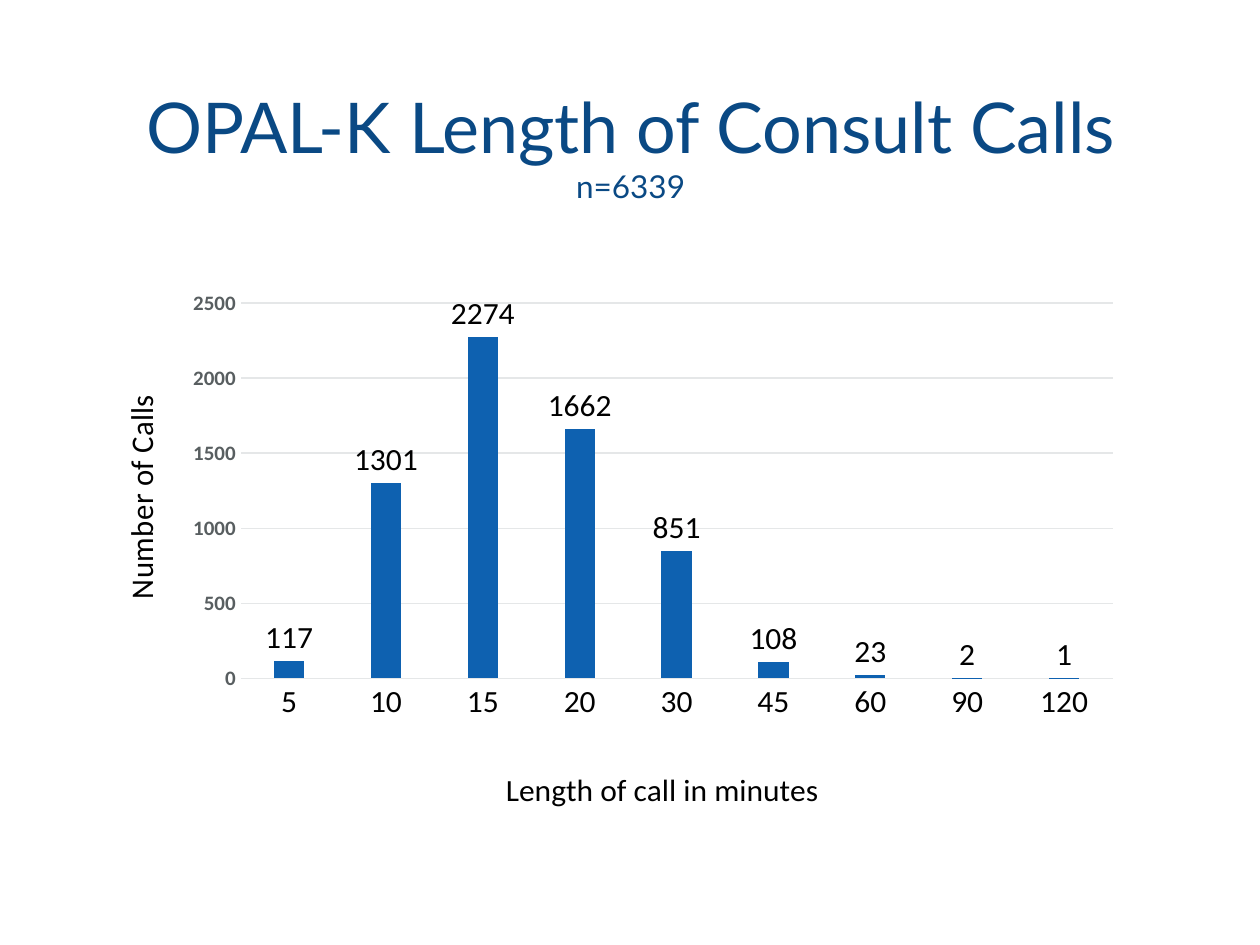
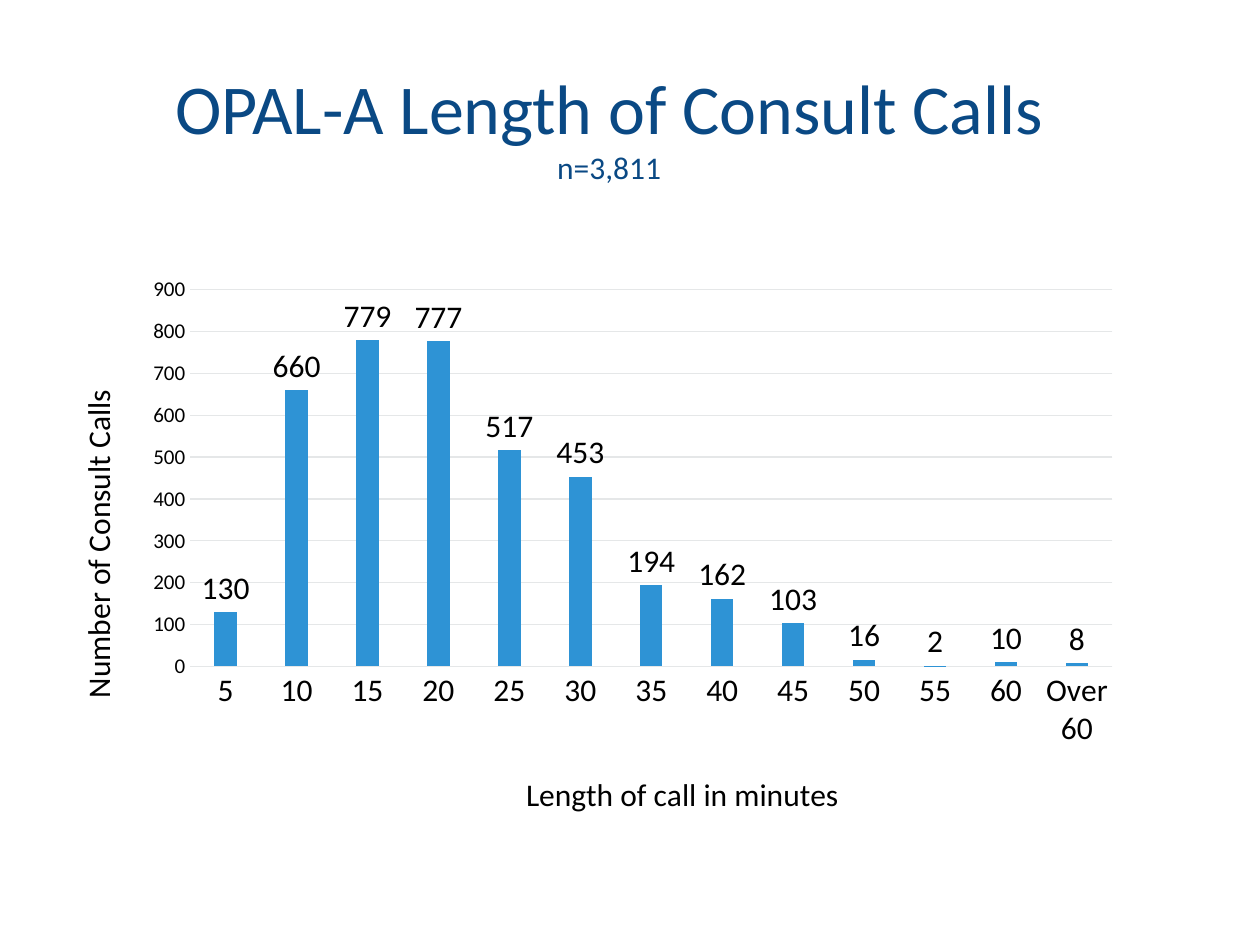
"""Build two slides charting the length of consult calls."""
from dataclasses import dataclass

from lxml import etree
from pptx import Presentation
from pptx.chart.data import CategoryChartData
from pptx.dml.color import RGBColor
from pptx.enum.chart import XL_CHART_TYPE, XL_LABEL_POSITION, XL_TICK_MARK
from pptx.enum.text import MSO_ANCHOR, MSO_AUTO_SIZE, PP_ALIGN
from pptx.oxml.ns import qn
from pptx.util import Emu, Pt

COLUMNS = XL_CHART_TYPE.COLUMN_CLUSTERED
OUTSIDE_END = XL_LABEL_POSITION.OUTSIDE_END
NO_TICK = XL_TICK_MARK.NONE
TOP = MSO_ANCHOR.TOP
NO_FIT = MSO_AUTO_SIZE.NONE
CENTER = PP_ALIGN.CENTER

EMU_PER_PX = 9144
SLIDE_WIDTH, SLIDE_HEIGHT = 1000, 750
TITLE_ONLY = 5

BLACK = RGBColor(0x00, 0x00, 0x00)
NAVY = RGBColor(0x0A, 0x49, 0x84)
DARK_BLUE = RGBColor(0x0E, 0x61, 0xB0)
SKY_BLUE = RGBColor(0x2E, 0x93, 0xD5)
SLATE = RGBColor(0x58, 0x5E, 0x60)
PALE_GREY = RGBColor(0xE5, 0xE7, 0xE8)
BODY_FONT = "Calibri"


@dataclass(frozen=True)
class Box:
    left: int
    top: int
    width: int
    height: int

    def emu(self) -> tuple[Emu, ...]:
        lengths = (self.left, self.top, self.width, self.height)
        return tuple(Emu(length * EMU_PER_PX) for length in lengths)


@dataclass(frozen=True)
class CallSlide:
    title: str
    count: str
    title_font: str
    title_box: Box
    chart_box: Box
    plot_box: Box
    calls: dict[str, int]
    bar_color: RGBColor
    call_axis_title: str
    call_axis_at: tuple[int, int]
    minutes_axis_at: tuple[int, int]
    axis_max: int
    axis_step: int
    scale_color: RGBColor
    scale_bold: bool


CALL_SLIDES = (
    CallSlide(
        title="OPAL-K Length of Consult Calls",
        count="n=6339",
        title_font="Lato",
        title_box=Box(66, 61, 869, 141),
        chart_box=Box(79, 223, 821, 427),
        plot_box=Box(191, 241, 692, 305),
        calls={"5": 117, "10": 1301, "15": 2274, "20": 1662, "30": 851,
               "45": 108, "60": 23, "90": 2, "120": 1},
        bar_color=DARK_BLUE,
        call_axis_title="Number of Calls",
        call_axis_at=(90, 315),
        minutes_axis_at=(397, 615),
        axis_max=2500,
        axis_step=500,
        scale_color=SLATE,
        scale_bold=True,
    ),
    CallSlide(
        title="OPAL-A Length of Consult Calls",
        count="n=3,811",
        title_font=BODY_FONT,
        title_box=Box(67, 46, 833, 145),
        chart_box=Box(42, 211, 858, 453),
        plot_box=Box(151, 230, 732, 299),
        calls={"5": 130, "10": 660, "15": 779, "20": 777, "25": 517,
               "30": 453, "35": 194, "40": 162, "45": 103, "50": 16,
               "55": 2, "60": 10, "Over 60": 8},
        bar_color=SKY_BLUE,
        call_axis_title="Number of Consult Calls",
        call_axis_at=(56, 305),
        minutes_axis_at=(413, 609),
        axis_max=900,
        axis_step=100,
        scale_color=BLACK,
        scale_bold=False,
    ),
)


def format_font(font, *, size: int, color: RGBColor,
                name: str = BODY_FONT, bold: bool = False) -> None:
    font.name = name
    font.size = Pt(size)
    font.bold = bold
    font.color.rgb = color


def write_text(paragraph, text: str, **font_format) -> None:
    run = paragraph.add_run()
    run.text = text
    format_font(run.font, **font_format)


def set_layout(element, **values) -> None:
    layout = element.find(qn("c:layout"))
    if layout is None:
        layout = etree.Element(qn("c:layout"))
        element.insert(0, layout)
    manual = etree.SubElement(layout, qn("c:manualLayout"))
    for name, value in values.items():
        etree.SubElement(manual, qn(f"c:{name}")).set("val", str(value))


def place_plot(chart, plot: Box, frame: Box) -> None:
    set_layout(
        chart._chartSpace.chart.plotArea,
        layoutTarget="inner", xMode="edge", yMode="edge",
        x=(plot.left - frame.left) / frame.width,
        y=(plot.top - frame.top) / frame.height,
        w=plot.width / frame.width,
        h=plot.height / frame.height,
    )


def add_axis_title(axis, text: str, position: tuple[int, int], frame: Box) -> None:
    paragraph = axis.axis_title.text_frame.paragraphs[0]
    write_text(paragraph, text, size=18, color=BLACK)
    left, top = position
    set_layout(
        axis.axis_title._element,
        xMode="edge", yMode="edge",
        x=(left - frame.left) / frame.width,
        y=(top - frame.top) / frame.height,
    )


def style_line(line) -> None:
    line.color.rgb = PALE_GREY
    line.width = Pt(0.75)


def add_title(slide, content: CallSlide) -> None:
    title = slide.shapes.title
    title.left, title.top, title.width, title.height = content.title_box.emu()
    frame = title.text_frame
    frame.word_wrap = True
    frame.auto_size = NO_FIT
    frame.vertical_anchor = TOP
    lines = ((frame.paragraphs[0], content.title, 40),
             (frame.add_paragraph(), content.count, 18))
    for paragraph, text, size in lines:
        paragraph.alignment = CENTER
        paragraph.space_before = Pt(0)
        write_text(paragraph, text, size=size, color=NAVY, name=content.title_font)


def add_call_chart(slide, content: CallSlide) -> None:
    data = CategoryChartData()
    data.categories = list(content.calls)
    data.add_series("Series 1", list(content.calls.values()))
    frame = content.chart_box
    chart = slide.shapes.add_chart(COLUMNS, *frame.emu(), data).chart
    chart.has_legend = False
    chart.has_title = False
    format_font(chart.font, size=10, color=SLATE)
    place_plot(chart, content.plot_box, frame)

    plot = chart.plots[0]
    plot.gap_width = 219
    plot.overlap = -27
    plot.vary_by_categories = False
    fill = plot.series[0].format.fill
    fill.solid()
    fill.fore_color.rgb = content.bar_color
    plot.has_data_labels = True
    labels = plot.data_labels
    labels.show_value = True
    labels.position = OUTSIDE_END
    format_font(labels.font, size=18, color=BLACK)

    minutes_axis, call_axis = chart.category_axis, chart.value_axis
    for axis in (minutes_axis, call_axis):
        axis.major_tick_mark = axis.minor_tick_mark = NO_TICK
    format_font(minutes_axis.tick_labels.font, size=18, color=BLACK)
    style_line(minutes_axis.format.line)
    add_axis_title(minutes_axis, "Length of call in minutes",
                   content.minutes_axis_at, frame)

    format_font(call_axis.tick_labels.font, size=12,
                color=content.scale_color, bold=content.scale_bold)
    call_axis.minimum_scale = 0
    call_axis.maximum_scale = content.axis_max
    call_axis.major_unit = content.axis_step
    call_axis.format.line.fill.background()
    style_line(call_axis.major_gridlines.format.line)
    add_axis_title(call_axis, content.call_axis_title, content.call_axis_at, frame)


def main() -> None:
    presentation = Presentation()
    presentation.slide_width = Emu(SLIDE_WIDTH * EMU_PER_PX)
    presentation.slide_height = Emu(SLIDE_HEIGHT * EMU_PER_PX)
    for content in CALL_SLIDES:
        slide = presentation.slides.add_slide(presentation.slide_layouts[TITLE_ONLY])
        add_title(slide, content)
        add_call_chart(slide, content)
    presentation.save("out.pptx")


if __name__ == "__main__":
    main()
